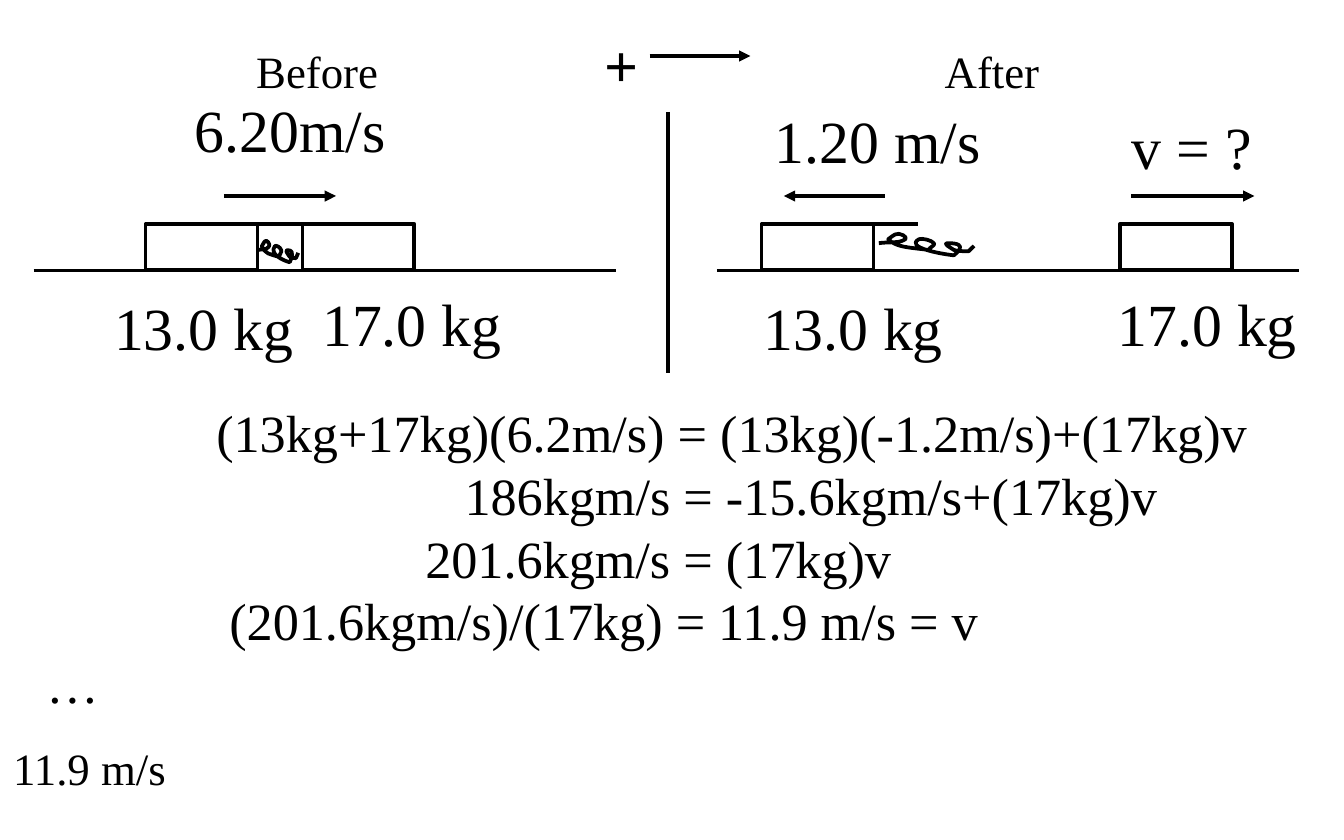
from lxml.etree import SubElement
from pptx import Presentation
from pptx.dml.color import RGBColor
from pptx.enum.shapes import MSO_CONNECTOR, MSO_SHAPE
from pptx.enum.text import MSO_AUTO_SIZE
from pptx.oxml.ns import qn
from pptx.util import Pt

COLORS = {"ink": "000000", "background": "FFFFFF"}
FONT = "Times New Roman"
GROUND, BLOCK_TOP, ARROW_Y = 144.9, 120, 105
BLOCK_WIDTH, SPRING_GAP = 60, 24

LABELS = [
    ("Before", 130.2, 20, 80.5, 24),
    ("After", 499, 20, 67, 24),
    ("6.20m/s", 97.2, 46, 118, 32),
    ("1.20 m/s", 408, 52, 126, 32),
    ("v = ?", 599.3, 55, 81, 32),
    ("13.0 kg", 54, 152, 111.5, 32),
    ("17.0 kg", 165.5, 150, 111.5, 32),
    ("13.0 kg", 402, 152, 111.5, 32),
    ("17.0 kg", 591.6, 150, 111.5, 32),
    ("11.9 m/s", 0, 393, 97, 24),
]
EQUATIONS = [
    ("(13kg+17kg)(6.2m/s) = (13kg)(-1.2m/s)+(17kg)v", 91),
    ("186kgm/s = -15.6kgm/s+(17kg)v", 224),
    ("201.6kgm/s = (17kg)v", 203),
    ("(201.6kgm/s)/(17kg) = 11.9 m/s = v", 98),
    ("…", 0),
]
DIVIDER = (357.8, 60, 357.8, 200)
GROUNDS = [(18, 330), (384, 696)]
BLOCKS = [78, 162, 408, 600]
SPRING_BLOCKS = [78, 408]
VELOCITIES = [(120, 180), (474, 420), (606, 672)]
SPRINGS = [(138.2, 129, 21.6, 11.5), (470.8, 125.3, 51, 11.5)]

SPRING_SIZE = (71, 16)
SPRING_START = (0, 7)
SPRING_CURVES = [
    ((6, 6), (14, 7), (18, 5)),
    ((22, 4), (20, 1), (15, 0)),
    ((10, 0), (10, 3), (7, 4)),
    ((13, 10), (21, 10), (37, 12)),
    ((38, 10), (43, 8), (41, 7)),
    ((40, 5), (32, 3), (30, 4)),
    ((19, 10), (46, 15), (56, 16)),
    ((57, 15), (68, 7), (52, 7)),
    ((47, 7), (53, 10), (56, 12)),
    ((58, 13), (63, 13), (67, 13)),
    ((68, 12), (71, 9), (71, 9)),
]


def color(name):
    return RGBColor.from_string(COLORS[name])


def style_outline(shape):
    shape.line.color.rgb = color("ink")
    shape.line.width = Pt(2)


def add_text(shapes, lines, left, top, width, height, size,
             bold=False, wrap=False, spacing=None):
    box = shapes.add_textbox(Pt(left), Pt(top), Pt(width), Pt(height))
    frame = box.text_frame
    frame.word_wrap = wrap
    frame.auto_size = MSO_AUTO_SIZE.SHAPE_TO_FIT_TEXT
    for index, (text, indent) in enumerate(lines):
        paragraph = frame.add_paragraph() if index else frame.paragraphs[0]
        if indent:
            paragraph._p.get_or_add_pPr().set("marL", str(Pt(indent)))
        if spacing:
            paragraph.line_spacing = Pt(spacing)
        run = paragraph.add_run()
        run.text = text
        run.font.name = FONT
        run.font.size = Pt(size)
        run.font.bold = bold
        run.font.color.rgb = color("ink")


def add_line(shapes, x1, y1, x2, y2, arrow=False):
    line = shapes.add_connector(
        MSO_CONNECTOR.STRAIGHT, Pt(x1), Pt(y1), Pt(x2), Pt(y2))
    style_outline(line)
    if arrow:
        SubElement(line.line._get_or_add_ln(), qn("a:tailEnd"), type="triangle")
    SubElement(line._element.spPr, qn("a:effectLst"))


def add_block(shapes, left):
    block = shapes.add_shape(MSO_SHAPE.RECTANGLE, Pt(left), Pt(BLOCK_TOP),
                             Pt(BLOCK_WIDTH), Pt(GROUND - BLOCK_TOP))
    block.shadow.inherit = False
    block.fill.background()
    style_outline(block)


def add_path_step(outline, tag, points):
    step = SubElement(outline, qn(tag))
    for x, y in points:
        SubElement(step, qn("a:pt"), x=str(Pt(x)), y=str(Pt(y)))


def add_spring(shapes, left, top, width, height):
    builder = shapes.build_freeform(Pt(left), Pt(top))
    builder.add_line_segments([(Pt(left + width), Pt(top + height))], close=False)
    spring = builder.convert_to_shape()
    outline = next(spring._element.iter(qn("a:path")))
    for step in list(outline):
        outline.remove(step)
    outline.set("w", str(Pt(SPRING_SIZE[0])))
    outline.set("h", str(Pt(SPRING_SIZE[1])))
    add_path_step(outline, "a:moveTo", [SPRING_START])
    for curve in SPRING_CURVES:
        add_path_step(outline, "a:cubicBezTo", curve)
    spring.shadow.inherit = False
    spring.fill.background()
    style_outline(spring)


def main():
    presentation = Presentation()
    presentation.slide_width = Pt(720)
    presentation.slide_height = Pt(450)
    slide = presentation.slides.add_slide(presentation.slide_layouts[6])
    slide.background.fill.solid()
    slide.background.fill.fore_color.rgb = color("background")
    shapes = slide.shapes

    add_line(shapes, *DIVIDER)
    for start, end in GROUNDS:
        add_line(shapes, start, GROUND, end, GROUND)
    for left in BLOCKS:
        add_block(shapes, left)
    for left in SPRING_BLOCKS:
        edge = left + BLOCK_WIDTH
        add_line(shapes, edge, BLOCK_TOP, edge + SPRING_GAP, BLOCK_TOP)
    for start, end in VELOCITIES:
        add_line(shapes, start, ARROW_Y, end, ARROW_Y, arrow=True)
    for spring in SPRINGS:
        add_spring(shapes, *spring)

    direction = shapes.add_group_shape()
    add_line(direction.shapes, 348, 30, 402, 30, arrow=True)
    add_text(direction.shapes, [("+", 0)], 316.6, 11.5, 33, 46, 32, bold=True)

    for text, left, top, width, size in LABELS:
        add_text(shapes, [(text, 0)], left, top, width, size * 1.2 + 7.5, size)
    add_text(shapes, EQUATIONS, 17.8, 211, 684, 177, 28, wrap=True, spacing=33.6)

    presentation.save("out.pptx")


if __name__ == "__main__":
    main()
